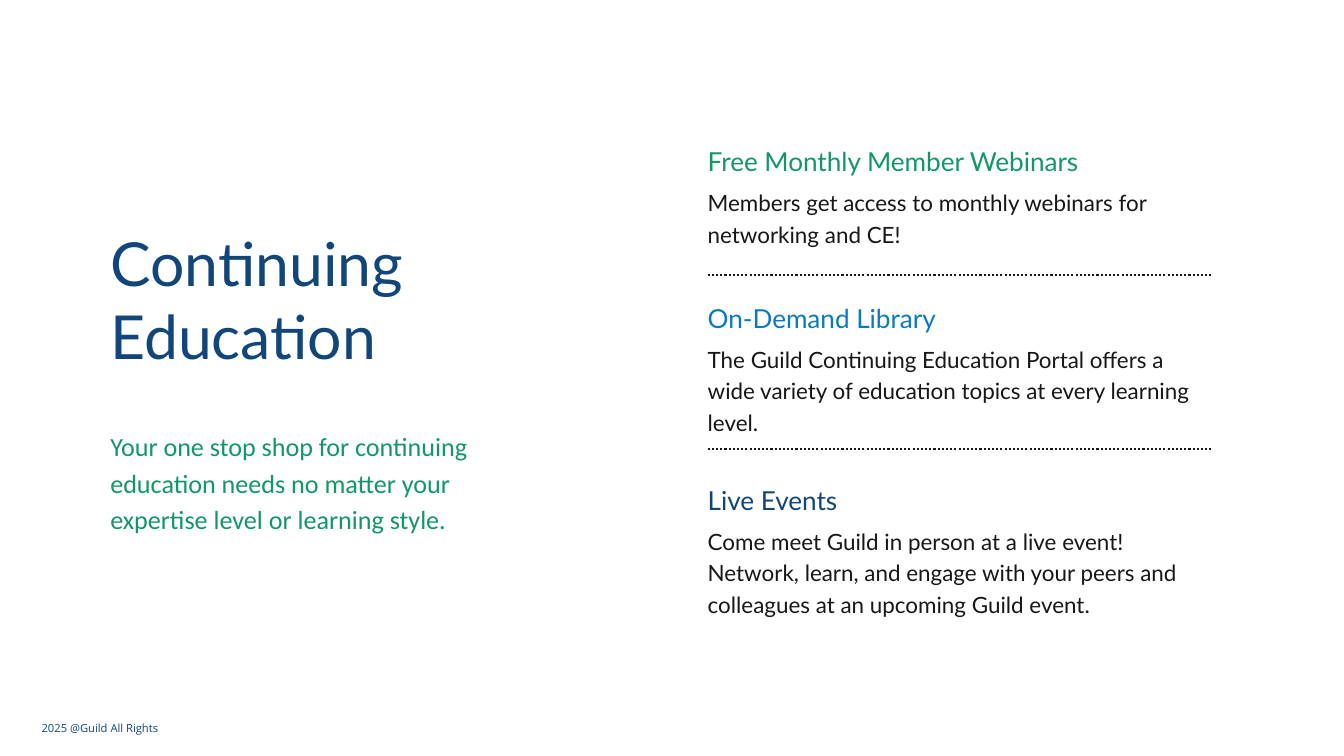
from lxml import etree
from pptx import Presentation
from pptx import util as u
from pptx.dml import color
from pptx.enum import dml, shapes, text
from pptx.oxml import ns

COLOURS = {"navy": "11467A", "green": "139765", "blue": "0C79BE", "ink": "171717", "paper": "FFFFFF"}
FORMATS = {
    "title": {"size": u.Pt(65), "name": "Lato", "leading": u.Pt(78)},
    "tagline": {"size": u.Pt(28), "name": "Calibri", "leading": u.Pt(39.2)},
    "heading": {"size": u.Pt(28), "name": "Lato", "leading": u.Pt(39.2)},
    "body": {"size": u.Pt(24), "name": "Lato", "leading": u.Pt(33.6)},
    "footer": {"size": u.Pt(12), "name": "Open Sans", "leading": u.Pt(16.8)},
}
TOPICS = [
    (5.31, 2.31, "green", "Free Monthly Member Webinars",
     "Members get access to monthly webinars for networking and CE!"),
    (11.23, 3.53, "blue", "On-Demand Library",
     "The Guild Continuing Education Portal offers a wide variety of education topics "
     "at every learning level."),
    (18.11, 3.53, "navy", "Live Events",
     "Come meet Guild in person at a live event! Network, learn, and engage with your "
     "peers and colleagues at an upcoming Guild event."),
]
DIVIDER_TOPS = (10.41, 16.97)


def rgb(name):
    """Return the named colour."""
    return color.RGBColor.from_string(COLOURS[name])


def write(shape, box, words, style, colour, align=text.PP_ALIGN.LEFT):
    """Place a text shape in a box given in centimetres and fill it with styled words."""
    for side, length in zip(("left", "top", "width", "height"), box):
        setattr(shape, side, u.Cm(length))
    frame = shape.text_frame
    settings = {"margin_left": 0, "margin_top": 0, "margin_right": 0, "margin_bottom": 0,
                "word_wrap": True, "vertical_anchor": text.MSO_ANCHOR.TOP,
                "auto_size": text.MSO_AUTO_SIZE.SHAPE_TO_FIT_TEXT}
    for key, value in settings.items():
        setattr(frame, key, value)
    para = frame.paragraphs[0]
    spacing = {"alignment": align, "line_spacing": FORMATS[style]["leading"], "space_before": u.Pt(0)}
    for key, value in spacing.items():
        setattr(para, key, value)
    span = para.add_run()
    span.text = words
    for key in ("size", "name"):
        setattr(span.font, key, FORMATS[style][key])
    span.font.color.rgb = rgb(colour)


def add_text(page, box, *content):
    """Add a text box that holds the given content."""
    write(page.shapes.add_textbox(0, 0, 0, 0), box, *content)


def add_intro(page, left, top):
    """Place the slide title with its tagline below."""
    write(page.shapes.title, (left, top, 18.67, 5.56), "Continuing Education", "title", "navy")
    add_text(page, (left, top + 7.55, 16.05, 4.06),
             "Your one stop shop for continuing education needs no matter your expertise "
             "level or learning style.", "tagline", "green")


def add_topic(page, box, colour, heading, body):
    """Place a coloured heading and the description under it."""
    left, top, width, height = box
    add_text(page, (left, top, width, 1.3), heading, "heading", colour)
    add_text(page, (left, top + 1.68, width, height), body, "body", "ink")


def add_divider(page, left, top, width):
    """Draw a dotted horizontal rule."""
    rule = page.shapes.add_connector(shapes.MSO_CONNECTOR.STRAIGHT, u.Cm(left), u.Cm(top),
                                     u.Cm(left + width), u.Cm(top))
    rule.line.color.rgb = rgb("ink")
    rule.line.width = u.Pt(2.25)
    rule.line.dash_style = dml.MSO_LINE.ROUND_DOT
    etree.SubElement(rule._element.spPr, ns.qn("a:effectLst"))


def add_topics(page, left, width):
    """Place the column of topics and the rules between them."""
    for top, height, colour, heading, body in TOPICS:
        add_topic(page, (left, top, width, height), colour, heading, body)
    for top in DIVIDER_TOPS:
        add_divider(page, left, top, width + 0.55)


def main():
    """Build the continuing education slide."""
    deck = Presentation()
    deck.slide_width, deck.slide_height = u.Cm(50.8), u.Cm(28.58)
    page = deck.slides.add_slide(deck.slide_layouts.get_by_name("Title Only"))
    page.background.fill.solid()
    page.background.fill.fore_color.rgb = rgb("paper")
    add_intro(page, 4.17, 8.53)
    add_topics(page, 26.75, 18.47)
    add_text(page, (1.42, 27.18, 4.72, 0.56), "2025 @Guild All Rights", "footer", "navy",
             text.PP_ALIGN.CENTER)
    deck.save("out.pptx")


if __name__ == "__main__":
    main()
